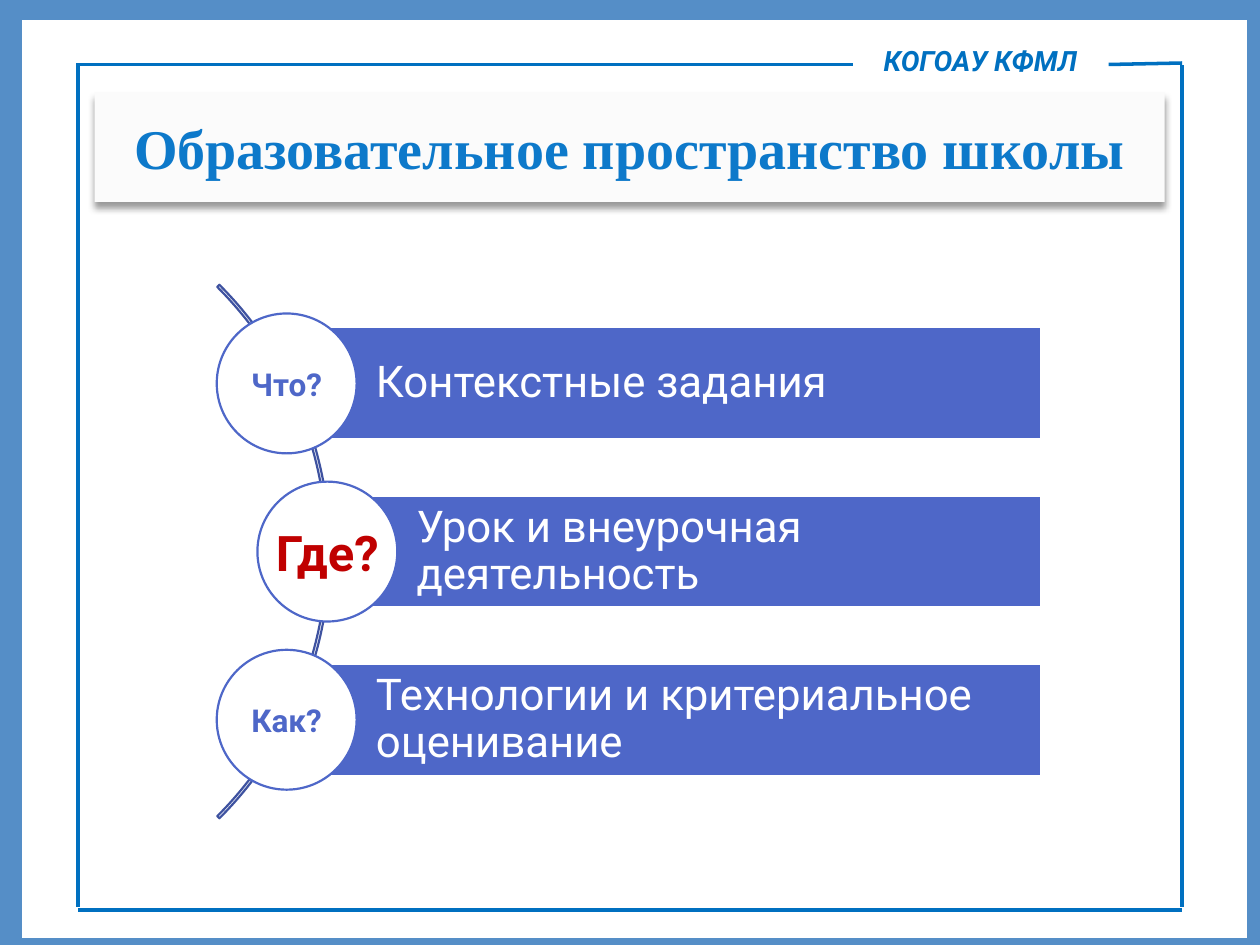
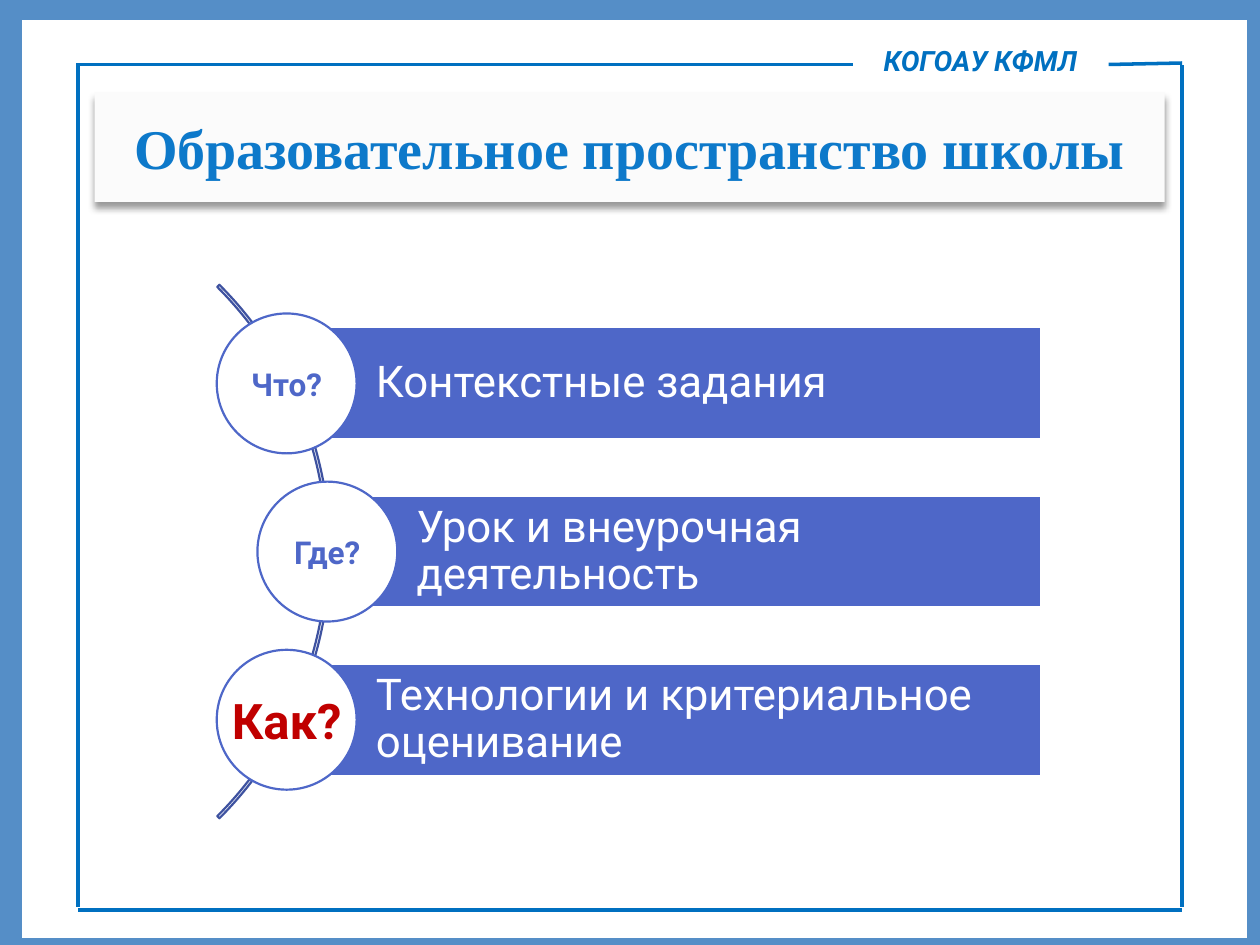
from lxml.etree import SubElement
from pptx import Presentation
from pptx.dml.color import RGBColor
from pptx.enum.shapes import MSO_CONNECTOR, MSO_SHAPE
from pptx.enum.text import MSO_ANCHOR, PP_ALIGN
from pptx.oxml.ns import qn
from pptx.util import Cm, Pt

WHITE = RGBColor(0xFF, 0xFF, 0xFF)
BORDER_BLUE = RGBColor(0x55, 0x8E, 0xC7)
FRAME_BLUE = RGBColor(0x00, 0x70, 0xC0)
TITLE_BLUE = RGBColor(0x0D, 0x79, 0xCA)
TITLE_FILL = RGBColor(0xFB, 0xFB, 0xFB)
BAR_BLUE = RGBColor(0x4E, 0x67, 0xC8)
ARC_BLUE = RGBColor(0x3E, 0x52, 0xA0)
HIGHLIGHT_RED = RGBColor(0xC0, 0x00, 0x00)

BODY_FONT = "Roboto"
TITLE_FONT = "Times New Roman"

FRAME_LEFT, FRAME_RIGHT, FRAME_TOP, FRAME_BOTTOM = 1.57, 23.83, 1.3, 18.34
FRAME_LINES = [
    (FRAME_LEFT, FRAME_TOP, 17.2, FRAME_TOP),
    (FRAME_LEFT, 1.27, FRAME_LEFT, 18.29),
    (FRAME_LEFT, FRAME_BOTTOM, FRAME_RIGHT, FRAME_BOTTOM),
    (FRAME_RIGHT, 1.32, FRAME_RIGHT, 18.29),
    (22.35, FRAME_TOP, FRAME_RIGHT, 1.27),
]

BAR_TOP, BAR_HEIGHT, BAR_PITCH, BAR_RIGHT = 6.6, 2.26, 3.39, 20.98
CIRCLE_SIZE = 2.82
ARC_LEFT, ARC_SIZE = -8.56, 15.21
QUESTIONS = [
    ("Что?", "Контекстные задания", 5.78),
    ("Где?", "Урок и внеурочная деятельность", 6.6),
    ("Как?", "Технологии и критериальное оценивание", 5.78),
]


class SlideBuilder:
    """Holds the deck style and draws on the current page."""

    def __init__(self, deck):
        self.deck = deck
        self.page = None

    def new_page(self):
        self.page = self.deck.slides.add_slide(self.deck.slide_layouts[6])

    def shape(self, kind, left, top, width, height, fill=None, line=None, line_width=1.25):
        shape = self.page.shapes.add_shape(kind, Cm(left), Cm(top), Cm(width), Cm(height))
        shape.shadow.inherit = False
        if fill is None:
            shape.fill.background()
        else:
            shape.fill.solid()
            shape.fill.fore_color.rgb = fill
        if line is None:
            shape.line.fill.background()
        else:
            shape.line.color.rgb = line
            shape.line.width = Pt(line_width)
        return shape

    def set_text(self, shape, text, size, color, name=BODY_FONT, bold=True, italic=False,
                 align=PP_ALIGN.CENTER, wrap=True):
        frame = shape.text_frame
        frame.word_wrap = wrap
        frame.vertical_anchor = MSO_ANCHOR.MIDDLE
        para = frame.paragraphs[0]
        para.text = text
        para.alignment = align
        font = para.font
        font.name, font.size, font.bold, font.italic = name, Pt(size), bold, italic
        font.color.rgb = color

    def line(self, x1, y1, x2, y2):
        line = self.page.shapes.add_connector(
            MSO_CONNECTOR.STRAIGHT, Cm(x1), Cm(y1), Cm(x2), Cm(y2))
        line.line.color.rgb = FRAME_BLUE
        line.line.width = Pt(2)
        SubElement(line._element.spPr, qn("a:effectLst"))

    def drop_shadow(self, shape):
        effects = shape._element.spPr.find(qn("a:effectLst"))
        shadow = SubElement(effects, qn("a:outerShdw"), blurRad=str(Pt(4)), dist=str(Pt(3)),
                            dir="5400000", algn="t", rotWithShape="0")
        color = SubElement(shadow, qn("a:srgbClr"), val="000000")
        SubElement(color, qn("a:alpha"), val="40000")

    def page_frame(self, school):
        self.shape(MSO_SHAPE.RECTANGLE, 0.18, 0.13, 25.22, 19.05,
                   line=BORDER_BLUE, line_width=15)
        for ends in FRAME_LINES:
            self.line(*ends)
        label = self.shape(MSO_SHAPE.RECTANGLE, 17.35, 0.74, 4.83, 0.94, fill=WHITE)
        self.set_text(label, school, 16, FRAME_BLUE, italic=True)

    def title(self, text):
        band = self.shape(MSO_SHAPE.RECTANGLE, 1.91, 1.86, 21.57, 2.21, fill=TITLE_FILL)
        self.drop_shadow(band)
        self.set_text(band, text, 32, TITLE_BLUE, name=TITLE_FONT)

    def arc(self):
        middle = BAR_TOP + BAR_PITCH + BAR_HEIGHT / 2
        arc = self.shape(MSO_SHAPE.BLOCK_ARC, ARC_LEFT, middle - ARC_SIZE / 2,
                         ARC_SIZE, ARC_SIZE, line=ARC_BLUE)
        # Start angle, end angle, band thickness
        for index, value in enumerate((189, 27, 0.004)):
            arc.adjustments[index] = value

    def bar(self, text, left, top):
        bar = self.shape(MSO_SHAPE.RECTANGLE, left, top, BAR_RIGHT - left, BAR_HEIGHT,
                         fill=BAR_BLUE, line=WHITE)
        self.set_text(bar, text, 25, WHITE, bold=False, align=PP_ALIGN.LEFT)
        frame = bar.text_frame
        frame.margin_left = Cm(1.8)
        frame.margin_top = frame.margin_right = frame.margin_bottom = Cm(0.18)
        frame.paragraphs[0].line_spacing = 0.9

    def circle(self, question, center_x, center_y, highlighted):
        circle = self.shape(MSO_SHAPE.OVAL, center_x - CIRCLE_SIZE / 2,
                            center_y - CIRCLE_SIZE / 2, CIRCLE_SIZE, CIRCLE_SIZE,
                            fill=WHITE, line=BAR_BLUE)
        size, color = (28, HIGHLIGHT_RED) if highlighted else (18, BAR_BLUE)
        self.set_text(circle, question, size, color, wrap=False)

    def question_list(self, highlighted):
        self.arc()
        for row, (question, answer, left) in enumerate(QUESTIONS):
            top = BAR_TOP + row * BAR_PITCH
            self.bar(answer, left, top)
            self.circle(question, left, top + BAR_HEIGHT / 2, question == highlighted)


def main():
    deck = Presentation()
    deck.slide_width, deck.slide_height = Cm(25.4), Cm(19.05)
    builder = SlideBuilder(deck)
    for highlighted in ("Где?", "Как?"):
        builder.new_page()
        builder.page_frame("КОГОАУ КФМЛ")
        builder.title("Образовательное пространство школы")
        builder.question_list(highlighted)
    deck.save("out.pptx")


if __name__ == "__main__":
    main()
